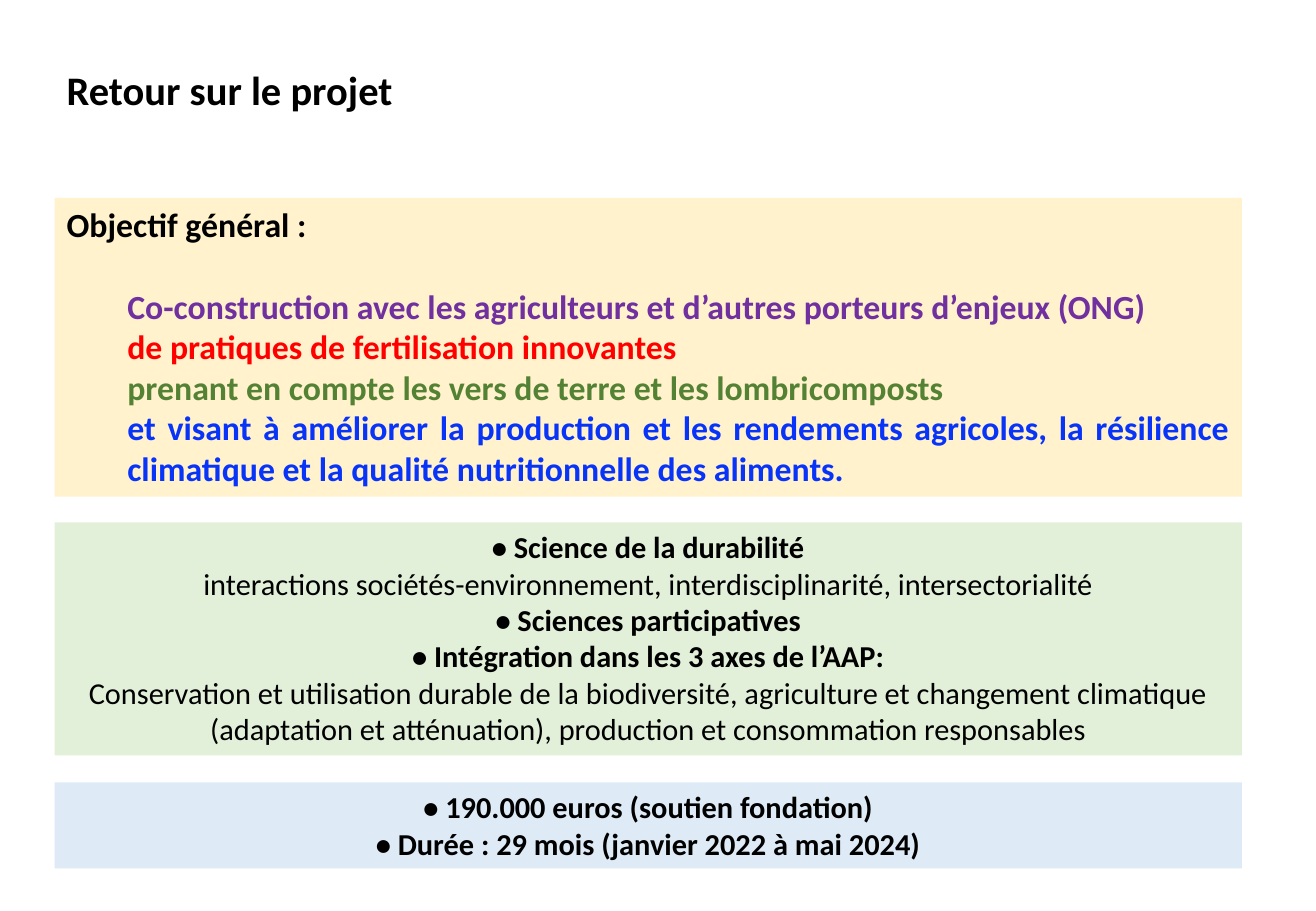
"""Build the project recap slide: a title above three coloured panels."""
from dataclasses import dataclass

from pptx import Presentation
from pptx.dml.color import RGBColor
from pptx.enum import shapes, text
from pptx.slide import Slide
from pptx.text.text import TextFrame
from pptx.util import Inches, Length, Pt


@dataclass(frozen=True)
class Theme:
    font: str = "Calibri"
    black: str = "000000"
    purple: str = "7030A0"
    red: str = "FF0000"
    green: str = "548235"
    blue: str = "0833F8"
    cream: str = "FFF2CC"
    mint: str = "E2F0D9"
    sky: str = "DEEBF7"
    title_size: float = 24
    goal_size: float = 20
    detail_size: float = 18


THEME = Theme()
LEFT = Inches(0.45)
PANEL_WIDTH = Inches(9.77)


@dataclass(frozen=True)
class Line:
    wording: str
    color: str = THEME.black
    bold: bool = True
    indent: float = 0
    space_after: float = 0


@dataclass(frozen=True)
class Panel:
    top: float
    height: float
    fill: str
    size: float
    align: text.PP_ALIGN
    lines: tuple[Line, ...]


GOAL_INDENT = 0.5
PANELS = (
    Panel(1.63, 2.46, THEME.cream, THEME.goal_size, text.PP_ALIGN.JUSTIFY, (
        Line("Objectif général :", space_after=24.4),
        Line("Co-construction avec les agriculteurs et d’autres porteurs d’enjeux (ONG)",
             THEME.purple, indent=GOAL_INDENT),
        Line("de pratiques de fertilisation innovantes", THEME.red, indent=GOAL_INDENT),
        Line("prenant en compte les vers de terre et les lombricomposts",
             THEME.green, indent=GOAL_INDENT),
        Line("et visant à améliorer la production et les rendements agricoles, la résilience "
             "climatique et la qualité nutritionnelle des aliments.",
             THEME.blue, indent=GOAL_INDENT),
    )),
    Panel(4.3, 1.92, THEME.mint, THEME.detail_size, text.PP_ALIGN.CENTER, (
        Line("• Science de la durabilité"),
        Line("interactions sociétés-environnement, interdisciplinarité, intersectorialité",
             bold=False),
        Line("• Sciences participatives"),
        Line("• Intégration dans les 3 axes de l’AAP:"),
        Line("Conservation et utilisation durable de la biodiversité, agriculture et changement "
             "climatique (adaptation et atténuation), production et consommation responsables",
             bold=False),
    )),
    Panel(6.44, 0.71, THEME.sky, THEME.detail_size, text.PP_ALIGN.CENTER, (
        Line("• 190.000 euros (soutien fondation)"),
        Line("• Durée : 29 mois (janvier 2022 à mai 2024)"),
    )),
)


def write_line(frame: TextFrame, wording: str, *, size: float, align: text.PP_ALIGN,
               first: bool = False, color: str = THEME.black, bold: bool = True,
               indent: Length = Inches(0), space_after: float = 0) -> None:
    """Write one formatted paragraph into a text frame."""
    para = frame.paragraphs[0] if first else frame.add_paragraph()
    para.alignment = align
    para.space_after = Pt(space_after)
    if indent:
        properties = para._p.get_or_add_pPr()
        properties.set("marL", str(int(indent)))
        properties.set("indent", "0")
    span = para.add_run()
    span.text = wording
    span.font.name = THEME.font
    span.font.size = Pt(size)
    span.font.bold = bold
    span.font.color.rgb = RGBColor.from_string(color)


def draw_title(page: Slide, wording: str) -> None:
    """Draw the page title."""
    box = page.shapes.add_textbox(LEFT, Inches(0.49), Inches(2.91), Inches(0.5))
    box.text_frame.word_wrap = False
    write_line(box.text_frame, wording, size=THEME.title_size,
               align=text.PP_ALIGN.LEFT, first=True)


def draw_panel(page: Slide, panel: Panel) -> None:
    """Draw one filled panel with its lines."""
    box = page.shapes.add_shape(shapes.MSO_SHAPE.RECTANGLE, LEFT, Inches(panel.top),
                                PANEL_WIDTH, Inches(panel.height))
    box.shadow.inherit = False
    box.fill.solid()
    box.fill.fore_color.rgb = RGBColor.from_string(panel.fill)
    box.line.fill.background()
    frame = box.text_frame
    frame.word_wrap = True
    frame.vertical_anchor = text.MSO_ANCHOR.TOP
    for index, line in enumerate(panel.lines):
        write_line(frame, line.wording, size=panel.size, align=panel.align,
                   first=index == 0, color=line.color, bold=line.bold,
                   indent=Inches(line.indent), space_after=line.space_after)


def main() -> None:
    """Create and save the deck."""
    deck = Presentation()
    deck.slide_width, deck.slide_height = Inches(10.83), Inches(7.5)
    page = deck.slides.add_slide(deck.slide_layouts[6])
    draw_title(page, "Retour sur le projet")
    for panel in PANELS:
        draw_panel(page, panel)
    deck.save("out.pptx")


if __name__ == "__main__":
    main()
